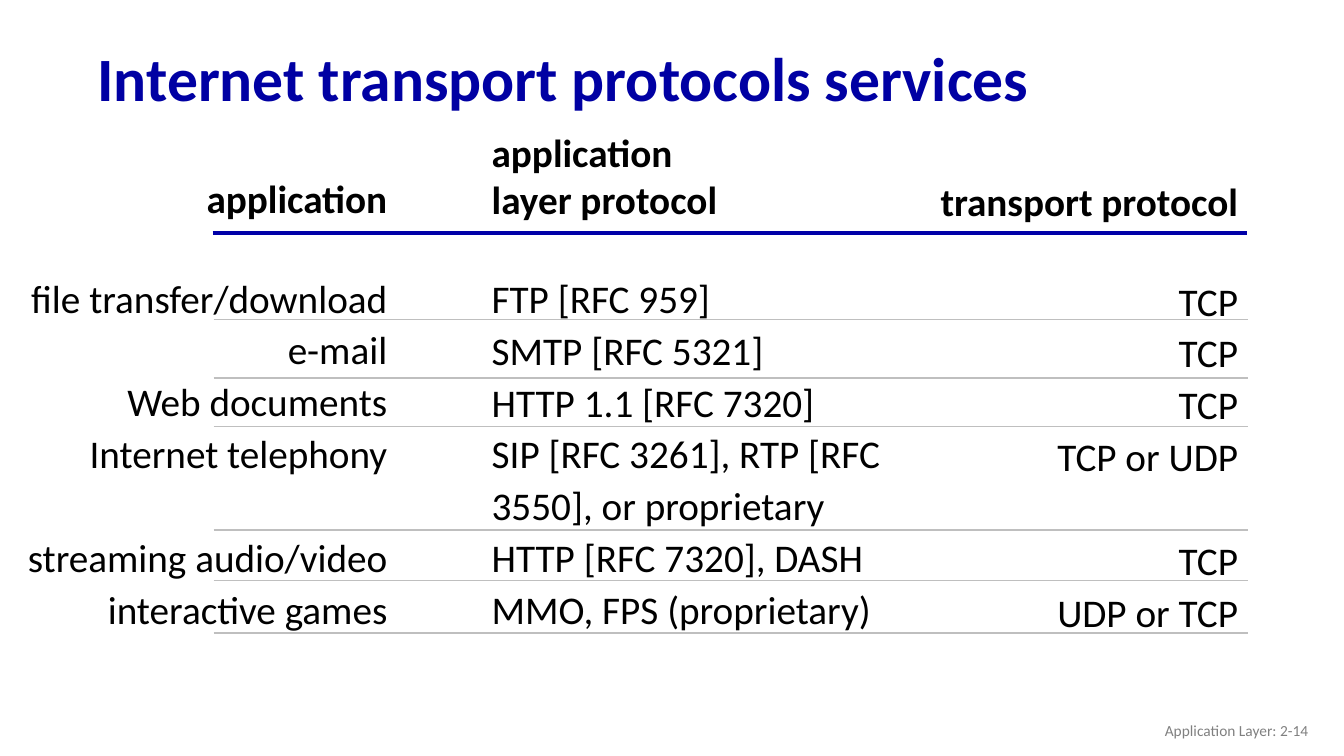
"""Build the slide on Internet transport protocol services."""
from dataclasses import dataclass

from lxml.etree import SubElement
from pptx import Presentation
from pptx.dml.color import RGBColor
from pptx.enum.shapes import MSO_CONNECTOR as CONN
from pptx.enum.text import MSO_ANCHOR as ANCHOR, PP_ALIGN as ALIGN
from pptx.oxml.ns import qn
from pptx.slide import Slide
from pptx.text.text import TextFrame
from pptx.util import Emu, Pt

COLS, ROWS = 160, 90
CELL = 76200
FONT = "Calibri"
BODY = 28
LINE = BODY * 1.22
LEADING = 1.1


@dataclass(frozen=True)
class Box:
    left: float
    top: float
    width: float
    height: float


@dataclass(frozen=True)
class Column:
    box: Box
    align: ALIGN
    heads: tuple[str, ...]
    rows: tuple[str, ...]
    two_line_row: int | None = None


@dataclass(frozen=True)
class Rule:
    left: float
    right: float
    top: float
    color: str = "BFBFBF"
    weight: float = 1.25


COLUMNS = (
    Column(Box(1.56, 20.16, 45.72, 55.8), ALIGN.RIGHT, ("application",),
           ("file transfer/download", "e-mail", "Web documents",
            "Internet telephony", "streaming audio/video",
            "interactive games"), 3),
    Column(Box(57.36, 14.64, 52.8, 67.68), ALIGN.LEFT,
           ("application", "layer protocol"),
           ("FTP [RFC 959]", "SMTP [RFC 5321]", "HTTP 1.1 [RFC 7320]",
            "SIP [RFC 3261], RTP [RFC 3550], or proprietary",
            "HTTP [RFC 7320], DASH", "MMO, FPS (proprietary)")),
    Column(Box(110.28, 20.52, 38.28, 55.8), ALIGN.RIGHT,
           ("transport protocol",),
           ("TCP", "TCP", "TCP", "TCP or UDP", "TCP", "UDP or TCP"), 3),
)
RULES = (
    Rule(25.32, 148.44, 27.72, "0000A8", 2.5),
    *(Rule(25.44, 148.56, top)
      for top in (38.04, 45, 50.76, 63.12, 69.12, 75.36)),
)


def grid(cells: float) -> Emu:
    """Turn grid cells into a length."""
    return Emu(round(cells * CELL))


def rgb(color: str) -> RGBColor:
    """Turn a hex string into a colour."""
    return RGBColor.from_string(color)


def apply(target: object, formats: dict[str, object]) -> None:
    """Set each format value on the target."""
    for name, value in formats.items():
        setattr(target, name, value)


def add_frame(s: Slide, box: Box, anchor: ANCHOR) -> TextFrame:
    """Add a wrapping text box and return its frame."""
    sp = s.shapes.add_textbox(*map(grid, (box.left, box.top,
                                          box.width, box.height)))
    tf = sp.text_frame
    apply(tf, {"word_wrap": True, "vertical_anchor": anchor})
    return tf


def write(tf: TextFrame, text: str, size: float, color: str, bold: bool,
          **layout: object) -> None:
    """Write one paragraph, reusing the first while it is empty."""
    p = tf.paragraphs[0] if not tf.text else tf.add_paragraph()
    apply(p, layout)
    r = p.add_run()
    r.text = text
    apply(r.font, {"name": FONT, "size": Pt(size), "bold": bold})
    r.font.color.rgb = rgb(color)


def draw_column(s: Slide, col: Column) -> None:
    """Draw the heading and the rows of one column."""
    tf = add_frame(s, col.box, ANCHOR.TOP)
    for head in col.heads:
        write(tf, head, BODY, "000000", True, alignment=col.align)
    for i, row in enumerate(col.rows):
        write(tf, row, BODY, "000000", False, alignment=col.align,
              line_spacing=LEADING,
              space_before=Pt(LINE if i == 0 else 0),
              space_after=Pt(LINE * LEADING if i == col.two_line_row else 0))


def draw_rule(s: Slide, rule: Rule) -> None:
    """Draw one horizontal rule."""
    top = grid(rule.top)
    sp = s.shapes.add_connector(CONN.STRAIGHT, grid(rule.left), top,
                                grid(rule.right), top)
    sp.line.color.rgb = rgb(rule.color)
    sp.line.width = Pt(rule.weight)
    SubElement(sp._element.spPr, qn("a:effectLst"))


def main() -> None:
    """Build and save the presentation."""
    prs = Presentation()
    apply(prs, {"slide_width": grid(COLS), "slide_height": grid(ROWS)})
    s = prs.slides.add_slide(prs.slide_layouts[6])
    title = add_frame(s, Box(10.44, 3.84, 138, 11.76), ANCHOR.MIDDLE)
    write(title, "Internet transport protocols services", 44, "0000A3", True,
          line_spacing=0.9)
    footer = add_frame(s, Box(120.96, 84.6, 36, 4.8), ANCHOR.MIDDLE)
    write(footer, "Application Layer: 2-14", 11, "808080", False,
          alignment=ALIGN.RIGHT)
    for rule in RULES:
        draw_rule(s, rule)
    for col in COLUMNS:
        draw_column(s, col)
    prs.save("out.pptx")


if __name__ == "__main__":
    main()
